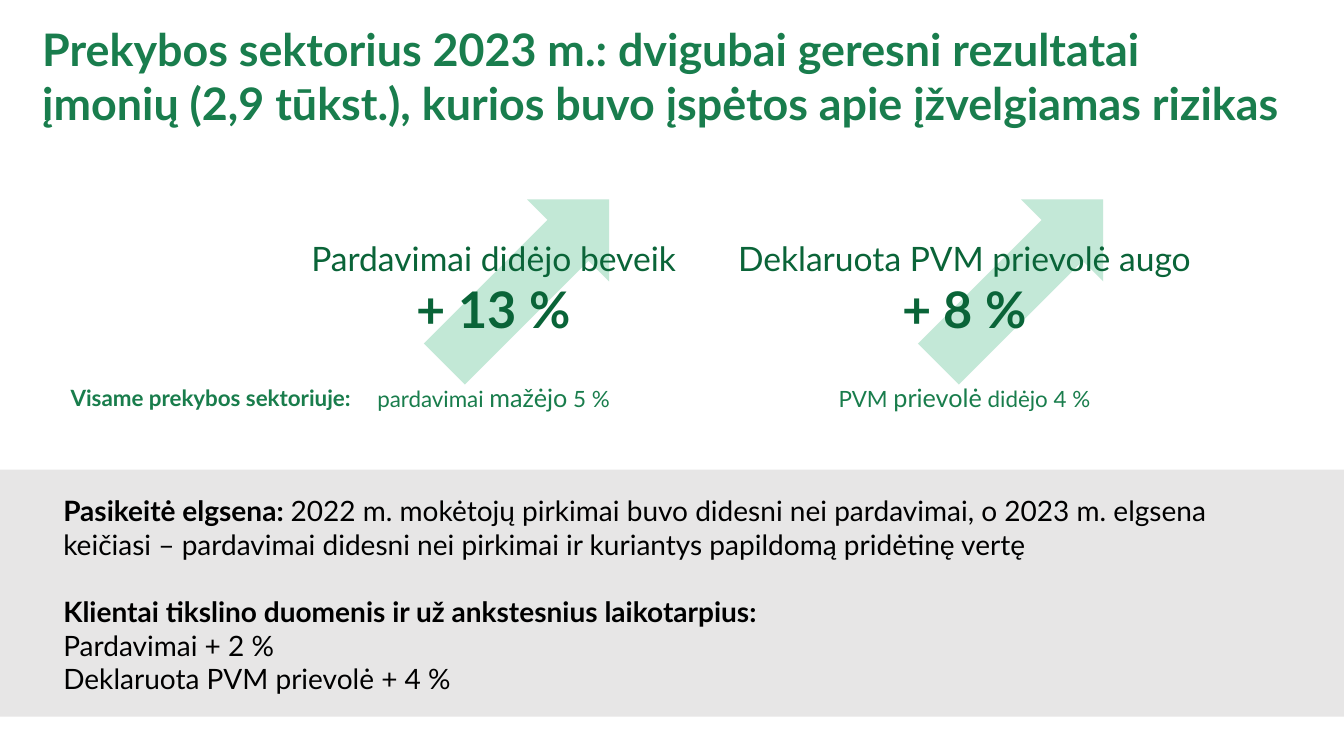
from dataclasses import dataclass

from lxml import etree
from pptx import Presentation
from pptx.dml.color import RGBColor
from pptx.enum.shapes import MSO_SHAPE
from pptx.enum.text import MSO_ANCHOR, MSO_AUTO_SIZE, PP_ALIGN
from pptx.oxml.ns import qn
from pptx.util import Inches, Pt

RECT, ARROW = MSO_SHAPE.RECTANGLE, MSO_SHAPE.RIGHT_ARROW
TOP, GROW = MSO_ANCHOR.TOP, MSO_AUTO_SIZE.SHAPE_TO_FIT_TEXT
LEFT, MID = PP_ALIGN.LEFT, PP_ALIGN.CENTER


@dataclass(frozen=True)
class Theme:
    face: str = "Lato"
    title: str = "197D4D"
    note: str = "197D4C"
    deep: str = "0A6438"
    ink: str = "000000"
    mint: str = "B5E3CD"
    grey: str = "E7E6E6"
    head: int = 32
    big: int = 36
    lead: int = 24
    body: int = 20
    mark: int = 18
    small: int = 16


class Deck:
    """Holds the theme and the slide that is being filled."""

    def __init__(self, theme):
        self.theme = theme
        self.file = Presentation()
        self.file.slide_width = Inches(13.33)
        self.file.slide_height = Inches(7.5)
        self.slide = self.file.slides.add_slide(self.file.slide_layouts[6])

    def shape(self, kind, box, color, turn=0, alpha=100):
        """Add a plain filled shape; alpha is its opacity in percent."""
        item = self.slide.shapes.add_shape(kind, *map(Inches, box))
        item.shadow.inherit = False
        item.rotation = turn
        item.line.fill.background()
        item.fill.solid()
        item.fill.fore_color.rgb = RGBColor.from_string(color)
        if alpha < 100:
            tint = item.fill._xPr.find(".//" + qn("a:srgbClr"))
            etree.SubElement(tint, qn("a:alpha"), val=str(alpha * 1000))

    def text(self, box, lines, color, align=LEFT, gaps=None):
        """Each line is a list of (text, size, bold); gaps maps line to space before."""
        item = self.slide.shapes.add_textbox(*map(Inches, box))
        frame = item.text_frame
        look = {"word_wrap": True, "auto_size": GROW, "vertical_anchor": TOP}
        for name, value in look.items():
            setattr(frame, name, value)
        for i, line in enumerate(lines):
            para = frame.add_paragraph() if i else frame.paragraphs[0]
            para.alignment = align
            if gaps and i in gaps:
                para.space_before = Pt(gaps[i])
            for words, size, bold in line:
                run = para.add_run()
                run.text = words
                style = {"name": self.theme.face, "size": Pt(size), "bold": bold}
                for name, value in style.items():
                    setattr(run.font, name, value)
                run.font.color.rgb = RGBColor.from_string(color)


def main():
    t = Theme()
    deck = Deck(t)
    deck.shape(RECT, (0, 4.66, 13.33, 2.45), t.grey)
    for left, alpha in ((4.07, 82), (8.97, 80)):
        deck.shape(ARROW, (left, 2.22, 2.31, 1.15), t.mint, 315, alpha)

    title = ("Prekybos sektorius 2023 m.: dvigubai geresni rezultatai įmonių "
             "(2,9 tūkst.), kurios buvo įspėtos apie įžvelgiamas rizikas")
    deck.text((0.32, 0.17, 12.51, 2.26), [[(title, t.head, True)]], t.title)

    for left, label, gain in (
        (2.39, "Pardavimai didėjo beveik", "+ 13 %"),
        (7.06, "Deklaruota PVM prievolė augo", "+ 8 %"),
    ):
        lines = [[(label, t.lead, False)], [(gain, t.big, True)]]
        deck.text((left, 2.31, 5.01, 1.11), lines, t.deep, MID)

    for left, width, parts in (
        (3.32, 3.15, ("pardavimai ", "mažėjo", " 5 %")),
        (7.94, 3.25, ("PVM ", "prievolė", " didėjo 4 %")),
    ):
        sizes = (t.small, t.mark, t.small)
        line = [(part, size, False) for part, size in zip(parts, sizes)]
        deck.text((left, 3.74, width, 0.4), [line], t.note, MID)
    sector = [("Visame prekybos sektoriuje:", t.small, True)]
    deck.text((0.38, 3.76, 3.42, 0.37), [sector], t.note, MID)

    shift = ("2022 m. mokėtojų pirkimai buvo didesni nei pardavimai, o 2023 m. "
             "elgsena keičiasi – pardavimai didesni nei pirkimai ir kuriantys "
             "papildomą pridėtinę vertę")
    lines = [
        [("Pasikeitė elgsena: ", t.body, True), (shift, t.body, False)],
        [("Klientai tikslino duomenis ir už ankstesnius laikotarpius:", t.body, True)],
        [("Pardavimai + 2 %", t.body, False)],
        [("Deklaruota PVM prievolė + 4 %", t.body, False)],
    ]
    deck.text((0.53, 4.85, 12.24, 2.73), lines, t.ink, gaps={1: 24})
    deck.file.save("out.pptx")


if __name__ == "__main__":
    main()
